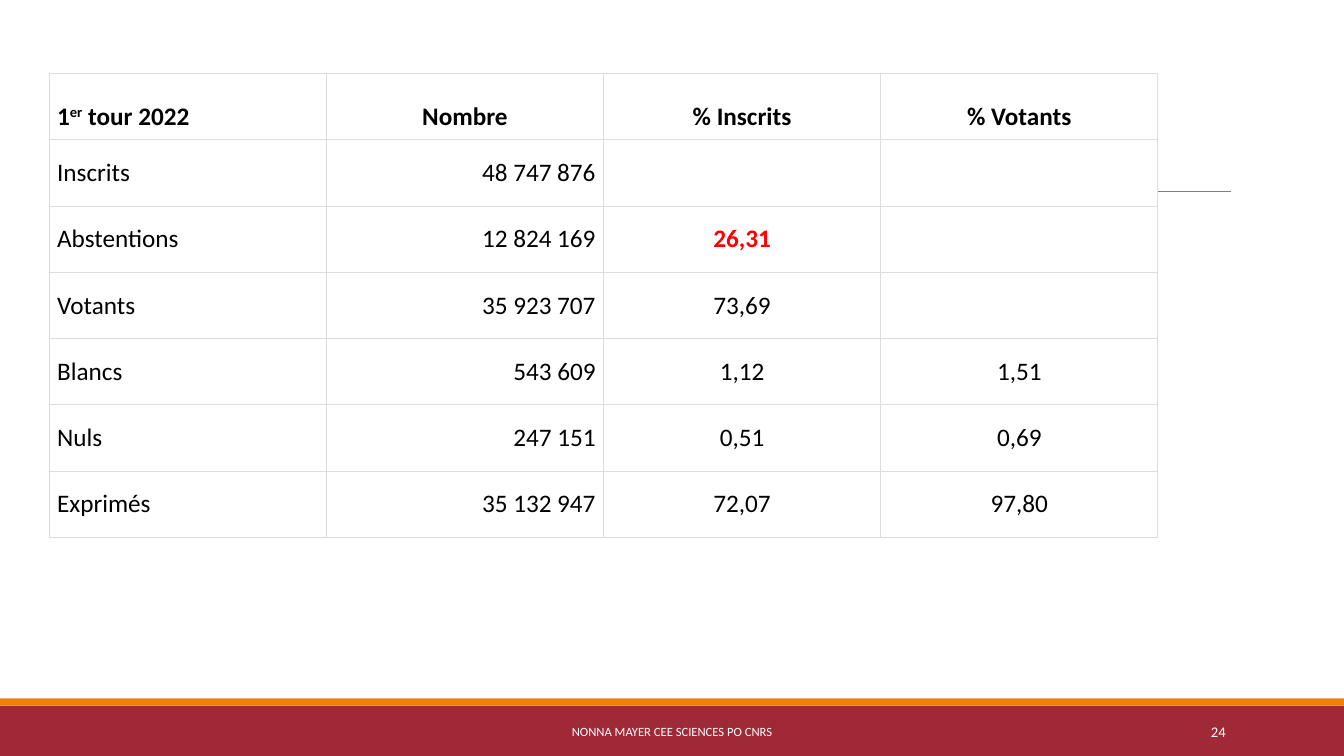
import pptx
import pptx.dml.color
import pptx.enum.shapes
import pptx.enum.text
import pptx.oxml
import pptx.oxml.ns
import pptx.util
from pptx.util import Cm

ALIGN = pptx.enum.text.PP_ALIGN
ANCHOR = pptx.enum.text.MSO_ANCHOR
FONT = "Calibri"
COLORS = {
    "band": "9F2936",
    "stripe": "F07F09",
    "rule": "808080",
    "border": "DDDDDD",
    "white": "FFFFFF",
    "black": "000000",
    "highlight": "FF0000",
}
HEADER = ["1er tour 2022", "Nombre", "% Inscrits", "% Votants"]
RESULTS = [
    ["Inscrits", "48 747 876", "", ""],
    ["Abstentions", "12 824 169", "26,31", ""],
    ["Votants", "35 923 707", "73,69", ""],
    ["Blancs", "543 609", "1,12", "1,51"],
    ["Nuls", "247 151", "0,51", "0,69"],
    ["Exprimés", "35 132 947", "72,07", "97,80"],
]
HEADER_ALIGNMENTS = [ALIGN.LEFT, ALIGN.CENTER, ALIGN.CENTER, ALIGN.CENTER]
RESULT_ALIGNMENTS = [ALIGN.LEFT, ALIGN.RIGHT, ALIGN.CENTER, ALIGN.CENTER]
HIGHLIGHTED = "26,31"


def rgb(name):
    return pptx.dml.color.RGBColor.from_string(COLORS[name])


def add_run(paragraph, text, size, color, bold=False, superscript=False):
    run = paragraph.add_run()
    run.text = text
    run.font.name = FONT
    run.font.size = pptx.util.Pt(size)
    run.font.bold = bold
    run.font.color.rgb = rgb(color)
    if superscript:
        run.font._element.set("baseline", "30000")


def add_band(slide, top, height, color):
    shape = slide.shapes.add_shape(
        pptx.enum.shapes.MSO_SHAPE.RECTANGLE, 0, top, Cm(33.87), height
    )
    shape.shadow.inherit = False
    shape.fill.solid()
    shape.fill.fore_color.rgb = rgb(color)
    shape.line.fill.background()


def add_rule(slide, left, right, top):
    connector = slide.shapes.add_connector(
        pptx.enum.shapes.MSO_CONNECTOR.STRAIGHT, left, top, right, top
    )
    connector.line.color.rgb = rgb("rule")
    connector.line.width = pptx.util.Pt(0.5)
    connector._element.spPr.append(pptx.oxml.parse_xml(
        f'<a:effectLst {pptx.oxml.ns.nsdecls("a")}/>'
    ))


def add_footer(slide, left, width, text, size, alignment):
    shape = slide.shapes.add_textbox(left, Cm(17.93), width, Cm(1.02))
    frame = shape.text_frame
    frame.word_wrap = True
    frame.vertical_anchor = ANCHOR.MIDDLE
    paragraph = frame.paragraphs[0]
    paragraph.alignment = alignment
    add_run(paragraph, text, size, "white")


def set_borders(cell):
    properties = cell._tc.get_or_add_tcPr()
    for position, side in enumerate(["lnL", "lnR", "lnT", "lnB"]):
        properties.insert(position, pptx.oxml.parse_xml(
            f'<a:{side} {pptx.oxml.ns.nsdecls("a")} w="{pptx.util.Pt(0.75)}">'
            f'<a:solidFill><a:srgbClr val="{COLORS["border"]}"/></a:solidFill>'
            f'</a:{side}>'
        ))


def fill_cell(cell, text, alignment, is_header):
    cell.fill.solid()
    cell.fill.fore_color.rgb = rgb("white")
    set_borders(cell)
    cell.margin_left = cell.margin_right = Cm(0.2)
    cell.margin_top = cell.margin_bottom = Cm(0.2)
    cell.vertical_anchor = ANCHOR.BOTTOM if is_header else ANCHOR.MIDDLE
    paragraph = cell.text_frame.paragraphs[0]
    paragraph.alignment = alignment
    highlighted = text == HIGHLIGHTED
    color = "highlight" if highlighted else "black"
    bold = is_header or highlighted
    before, ordinal, after = text.partition("er tour")
    if ordinal:
        add_run(paragraph, before, 18, color, bold)
        add_run(paragraph, "er", 18, color, bold, superscript=True)
        add_run(paragraph, " tour" + after, 18, color, bold)
    elif text:
        add_run(paragraph, text, 18, color, bold)


def add_results_table(slide):
    rows = [HEADER] + RESULTS
    table = slide.shapes.add_table(
        len(rows), len(HEADER), Cm(1.24), Cm(1.85), Cm(27.94), Cm(11.69)
    ).table
    table.horz_banding = False
    for column in table.columns:
        column.width = Cm(6.985)
    for row in table.rows:
        row.height = Cm(1.67)
    for row_index, texts in enumerate(rows):
        is_header = row_index == 0
        alignments = HEADER_ALIGNMENTS if is_header else RESULT_ALIGNMENTS
        for column_index, text in enumerate(texts):
            cell = table.cell(row_index, column_index)
            fill_cell(cell, text, alignments[column_index], is_header)


def main():
    presentation = pptx.Presentation()
    presentation.slide_width = Cm(33.87)
    presentation.slide_height = Cm(19.05)
    slide = presentation.slides.add_slide(presentation.slide_layouts[6])
    add_band(slide, Cm(17.78), Cm(1.27), "band")
    add_band(slide, Cm(17.6), Cm(0.18), "stripe")
    add_rule(slide, Cm(3.33), Cm(31.01), Cm(4.83))
    add_results_table(slide)
    add_footer(slide, Cm(10.24), Cm(13.39),
               "NONNA MAYER CEE SCIENCES PO CNRS", 9, ALIGN.CENTER)
    add_footer(slide, Cm(27.51), Cm(3.63), "24", 10.5, ALIGN.RIGHT)
    presentation.save("out.pptx")


if __name__ == "__main__":
    main()
